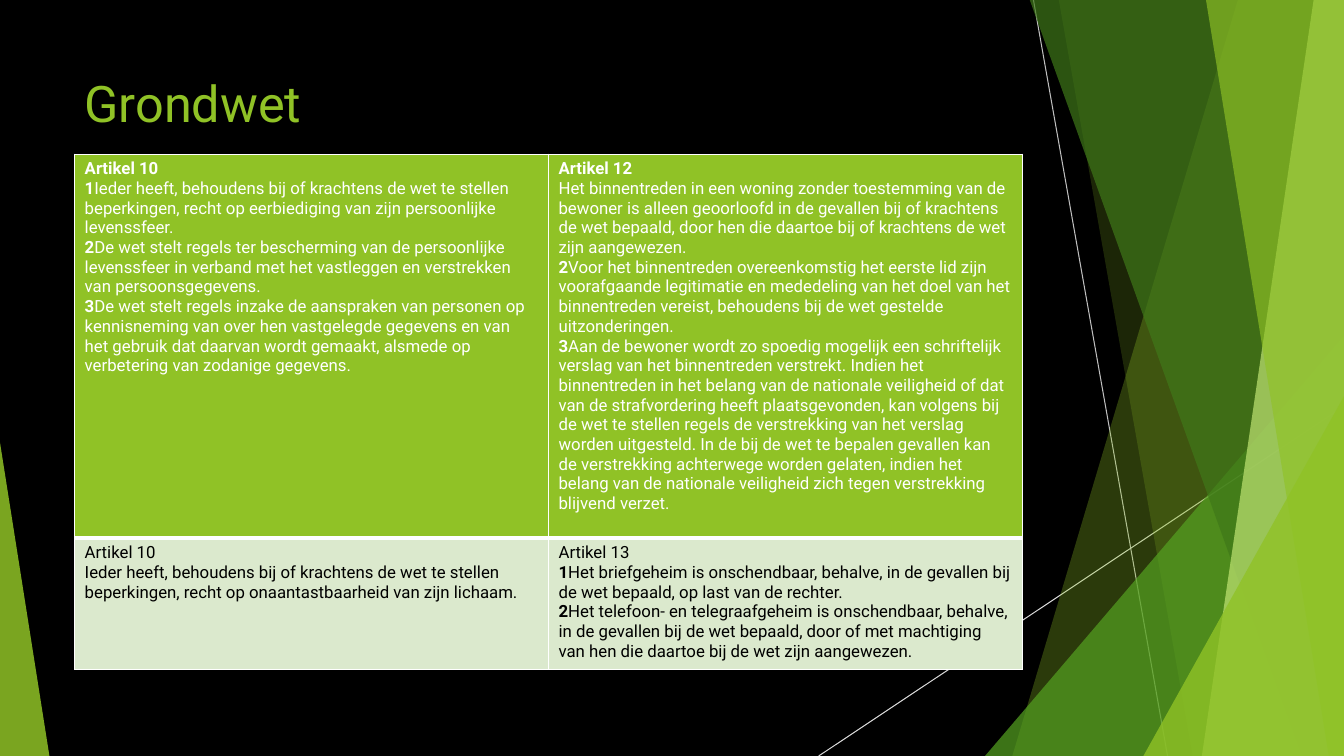
"""Builds the Grondwet slide: angular green decoration, a title and a table of articles."""
import dataclasses

import lxml.etree
import pptx
import pptx.dml.color
import pptx.enum.shapes
import pptx.enum.text
import pptx.oxml.ns
import pptx.util

Inches = pptx.util.Inches
WIDTH, HEIGHT = 13.33, 7.5


@dataclasses.dataclass(frozen=True)
class Theme:
    font: str = "Roboto"
    title_size: int = 36
    body_size: int = 12
    black: str = "000000"
    white: str = "FFFFFF"
    green: str = "90C226"
    leaf: str = "54A021"
    forest: str = "3F7819"
    lime: str = "C0E474"
    pale: str = "DBE9CD"
    gray: str = "BFBFBF"
    silver: str = "D9D9D9"


THEME = Theme()

ARTICLES = [
    [
        [
            ("Artikel 10", ""),
            ("1", "Ieder heeft, behoudens bij of krachtens de wet te stellen beperkingen, recht op "
                  "eerbiediging van zijn persoonlijke levenssfeer."),
            ("2", "De wet stelt regels ter bescherming van de persoonlijke levenssfeer in verband met "
                  "het vastleggen en verstrekken van persoonsgegevens."),
            ("3", "De wet stelt regels inzake de aanspraken van personen op kennisneming van over hen "
                  "vastgelegde gegevens en van het gebruik dat daarvan wordt gemaakt, alsmede op "
                  "verbetering van zodanige gegevens."),
        ],
        [
            ("Artikel 12", ""),
            ("", "Het binnentreden in een woning zonder toestemming van de bewoner is alleen geoorloofd "
                 "in de gevallen bij of krachtens de wet bepaald, door hen die daartoe bij of krachtens "
                 "de wet zijn aangewezen."),
            ("2", "Voor het binnentreden overeenkomstig het eerste lid zijn voorafgaande legitimatie en "
                  "mededeling van het doel van het binnentreden vereist, behoudens bij de wet gestelde "
                  "uitzonderingen."),
            ("3", "Aan de bewoner wordt zo spoedig mogelijk een schriftelijk verslag van het "
                  "binnentreden verstrekt. Indien het binnentreden in het belang van de nationale "
                  "veiligheid of dat van de strafvordering heeft plaatsgevonden, kan volgens bij de wet "
                  "te stellen regels de verstrekking van het verslag worden uitgesteld. In de bij de "
                  "wet te bepalen gevallen kan de verstrekking achterwege worden gelaten, indien het "
                  "belang van de nationale veiligheid zich tegen verstrekking blijvend verzet."),
        ],
    ],
    [
        [
            ("", "Artikel 10"),
            ("", "Ieder heeft, behoudens bij of krachtens de wet te stellen beperkingen, recht op "
                 "onaantastbaarheid van zijn lichaam."),
        ],
        [
            ("", "Artikel 13"),
            ("1", "Het briefgeheim is onschendbaar, behalve, in de gevallen bij de wet bepaald, op last "
                  "van de rechter."),
            ("2", "Het telefoon- en telegraafgeheim is onschendbaar, behalve, in de gevallen bij de wet "
                  "bepaald, door of met machtiging van hen die daartoe bij de wet zijn aangewezen."),
        ],
    ],
]


def rgb(color):
    return pptx.dml.color.RGBColor.from_string(color)


def add_child(parent, tag, **attributes):
    return lxml.etree.SubElement(parent, pptx.oxml.ns.qn(tag), attributes)


def paint(shape, color, opacity):
    shape.shadow.inherit = False
    shape.fill.solid()
    shape.fill.fore_color.rgb = rgb(color)
    shape.line.fill.background()
    color_node = shape.fill._xPr.find(".//" + pptx.oxml.ns.qn("a:srgbClr"))
    add_child(color_node, "a:alpha", val=str(opacity * 1000))


def add_thin_line(page, start, end, color):
    line = page.shapes.add_connector(
        pptx.enum.shapes.MSO_CONNECTOR.STRAIGHT, *map(Inches, start + end))
    line.line.color.rgb = rgb(color)
    line.line.width = pptx.util.Pt(0.75)
    add_child(line._element.spPr, "a:effectLst")


def add_panel(page, top_x, bottom_x, color, opacity):
    corners = [(top_x, -0.01), (WIDTH, -0.01), (WIDTH, HEIGHT), (bottom_x, HEIGHT)]
    points = [(Inches(x), Inches(y)) for x, y in corners]
    builder = page.shapes.build_freeform(*points[0])
    builder.add_line_segments(points[1:], close=True)
    paint(builder.convert_to_shape(), color, opacity)


def add_corner(page, left, top, width, apex, color, opacity):
    triangle = page.shapes.add_shape(
        pptx.enum.shapes.MSO_SHAPE.ISOSCELES_TRIANGLE,
        Inches(left), Inches(top), Inches(width), Inches(HEIGHT - top))
    triangle.adjustments[0] = apex
    paint(triangle, color, opacity)


def add_span(para, text, size, color, bold=False):
    span = para.add_run()
    span.text = text
    formats = {"name": THEME.font, "size": pptx.util.Pt(size), "bold": bold}
    for name, value in formats.items():
        setattr(span.font, name, value)
    span.font.color.rgb = rgb(color)


def add_title(page, text):
    box = page.shapes.add_textbox(Inches(0.74), Inches(0.67), Inches(9.4), Inches(1.44))
    formats = {"word_wrap": True, "vertical_anchor": pptx.enum.text.MSO_ANCHOR.TOP}
    for name, value in formats.items():
        setattr(box.text_frame, name, value)
    add_span(box.text_frame.paragraphs[0], text, THEME.title_size, THEME.green)


def set_borders(cell, widths):
    properties = cell._tc.get_or_add_tcPr()
    for side, width in widths.items():
        edge = add_child(properties, f"a:ln{side}", w=str(pptx.util.Pt(width)))
        add_child(add_child(edge, "a:solidFill"), "a:srgbClr", val=THEME.white)


def fill_cell(cell, article, ink, fill, borders):
    set_borders(cell, borders)
    cell.fill.solid()
    cell.fill.fore_color.rgb = rgb(fill)
    frame = cell.text_frame
    for index, (lead, body) in enumerate(article):
        para = frame.add_paragraph() if index else frame.paragraphs[0]
        for text, bold in ((lead, True), (body, False)):
            if text:
                add_span(para, text, THEME.body_size, ink, bold)


def add_articles(page):
    heights = [3.81, 1.27]
    looks = [
        (THEME.white, THEME.green, {"L": 1, "R": 1, "T": 1, "B": 3}),
        (THEME.black, THEME.pale, {"L": 1, "R": 1, "T": 3, "B": 1}),
    ]
    table = page.shapes.add_table(
        2, 2, Inches(0.74), Inches(1.53), Inches(9.4), Inches(sum(heights))).table
    table.horz_banding = False
    for row, height, articles, look in zip(table.rows, heights, ARTICLES, looks):
        row.height = Inches(height)
        for cell, article in zip(row.cells, articles):
            fill_cell(cell, article, *look)


def add_decoration(page):
    add_thin_line(page, (10.25, 0), (11.58, HEIGHT), THEME.gray)
    add_thin_line(page, (WIDTH, 4.03), (8.12, HEIGHT), THEME.silver)
    add_panel(page, 12.28, 10.04, THEME.green, 30)
    add_panel(page, 10.5, 11.83, THEME.green, 20)
    add_corner(page, 9.77, 3.33, 3.56, 1, THEME.leaf, 72)
    add_panel(page, 10.21, 12.91, THEME.forest, 70)
    add_panel(page, 13.03, 11.92, THEME.lime, 70)
    add_panel(page, 11.96, 13.18, THEME.green, 65)
    add_corner(page, 11.34, 3.93, 1.99, 1, THEME.green, 80)
    add_corner(page, 0, 4.39, 0.49, 0, THEME.green, 85)


def main():
    deck = pptx.Presentation()
    deck.slide_width, deck.slide_height = Inches(WIDTH), Inches(HEIGHT)
    page = deck.slides.add_slide(deck.slide_layouts[6])
    page.background.fill.solid()
    page.background.fill.fore_color.rgb = rgb(THEME.black)
    add_decoration(page)
    add_title(page, "Grondwet")
    add_articles(page)
    deck.save("out.pptx")


if __name__ == "__main__":
    main()
